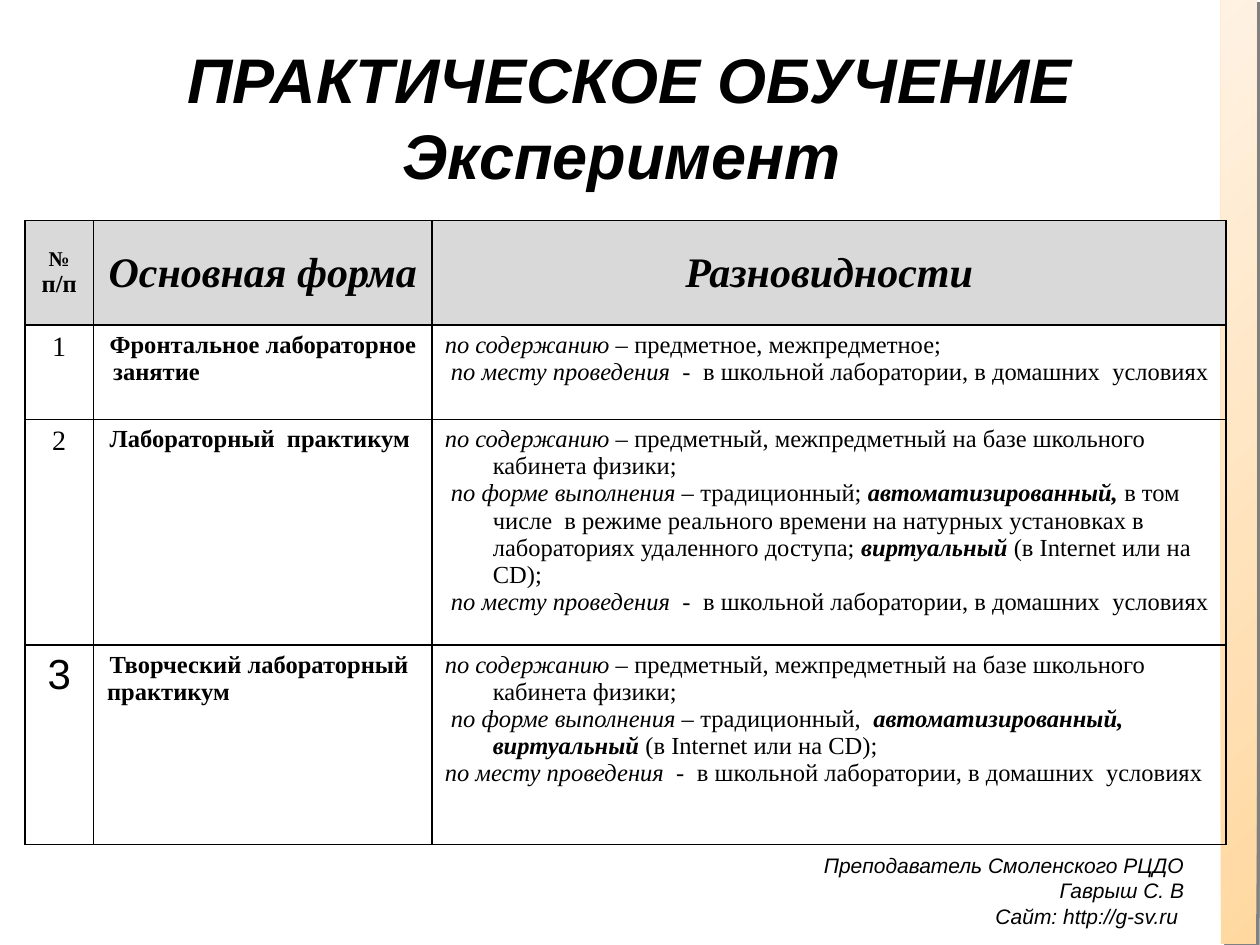
from dataclasses import dataclass

from lxml import etree
from pptx import Presentation
from pptx.dml.color import RGBColor
from pptx.enum.shapes import MSO_SHAPE
from pptx.enum.text import MSO_ANCHOR, PP_ALIGN
from pptx.oxml import parse_xml
from pptx.oxml.ns import nsdecls, qn
from pptx.util import Pt

RECT = MSO_SHAPE.RECTANGLE
TOP, MID = MSO_ANCHOR.TOP, MSO_ANCHOR.MIDDLE
LEFT, MIDDLE, RIGHT = PP_ALIGN.LEFT, PP_ALIGN.CENTER, PP_ALIGN.RIGHT


@dataclass(frozen=True)
class Theme:
    ink: str = "000000"
    head: str = "D9D9D9"
    dark: str = "FFD8A0"
    light: str = "FFF2E3"
    shade: str = "808080"
    sans: str = "Arial"
    serif: str = "Times New Roman"
    title: int = 36
    big: int = 24
    num: int = 16
    body: int = 14
    small: int = 12


T = Theme()
COLS = (38.9, 193.7, 453.6)
ROWS = (59.8, 54, 128.9, 113.8)
HANG = (27.4, -27.4)
DEEP = (41.8, -41.8)
NEAR = (0.7, 1.4)

BASE = ("по содержанию – ", "i")
FORM = ("по форме выполнения –", "i")
SITE = [("по месту проведения  -  ", "i"),
        ("в школьной лаборатории, в домашних  условиях", "")]
GAP = (" ", "")
ROOM = [BASE, ("предметный, межпредметный на базе школьного кабинета физики;", "")]
DATA = [
    ("1", T.num, T.serif, "Фронтальное лабораторное  занятие",
     [[BASE, ("предметное, межпредметное;", "")], [GAP, *SITE]]),
    ("2", T.num, T.serif, "Лабораторный  практикум",
     [ROOM,
      [GAP, FORM, (" традиционный; ", ""), ("автоматизированный, ", "bi"),
       ("в том числе  в режиме реального времени на натурных установках "
        "в лабораториях удаленного доступа;", ""),
       (" виртуальный ", "bi"), ("(в Internet или на CD);", "")],
      [GAP, *SITE]]),
    ("3", T.big, T.sans, "Творческий лабораторный практикум",
     [ROOM,
      [GAP, FORM, (" традиционный,  ", ""),
       ("автоматизированный, виртуальный", "bi"),
       (" (в Internet или на CD);", "")],
      SITE]),
]


def style(font, size, face, mark):
    look = {"size": Pt(size), "name": face,
            "bold": "b" in mark, "italic": "i" in mark}
    for key, val in look.items():
        setattr(font, key, val)
    font.color.rgb = RGBColor.from_string(T.ink)


def write(frame, paras, size, face, align=LEFT, indent=None):
    for i, runs in enumerate(paras):
        para = frame.add_paragraph() if i else frame.paragraphs[0]
        para.alignment = align
        if indent:
            props = para._p.get_or_add_pPr()
            for key, val in zip(("marL", "indent"), indent):
                props.set(key, str(int(Pt(val))))
        for text, mark, *own in runs:
            for j, part in enumerate(text.split("\n")):
                if j:
                    para.add_line_break()
                run = para.add_run()
                run.text = part
                style(run.font, own[0] if own else size, face, mark)


def add_text(slide, box, paras, size, align, anchor):
    frame = slide.shapes.add_textbox(*map(Pt, box)).text_frame
    frame.word_wrap = True
    frame.vertical_anchor = anchor
    write(frame, paras, size, T.sans, align)


def add_bar(slide, box):
    bar = slide.shapes.add_shape(RECT, *map(Pt, box))
    bar.line.fill.background()
    bar.fill.gradient()
    bar.fill.gradient_angle = 135
    for stop, tone in zip(bar.fill.gradient_stops, (T.dark, T.light)):
        stop.color.rgb = RGBColor.from_string(tone)
    bar.shadow.inherit = False
    cast = parse_xml(
        f'<a:outerShdw {nsdecls("a")} dist="{int(Pt(2.8))}" dir="2700000">'
        f'<a:srgbClr val="{T.shade}"/></a:outerShdw>')
    bar._element.spPr.find(qn("a:effectLst")).append(cast)


def edge(cell):
    props = cell._tc.get_or_add_tcPr()
    for i, side in enumerate(("lnL", "lnR", "lnT", "lnB")):
        line = etree.Element(qn(f"a:{side}"), w=str(int(Pt(1))))
        fill = etree.SubElement(line, qn("a:solidFill"))
        etree.SubElement(fill, qn("a:srgbClr"), val=T.ink)
        props.insert(i, line)


def fill_cell(cell, paras, size, face, align, indent, head=False):
    if head:
        cell.fill.solid()
        cell.fill.fore_color.rgb = RGBColor.from_string(T.head)
    else:
        cell.fill.background()
    cell.vertical_anchor = MID if head else TOP
    write(cell.text_frame, paras, size, face, align, indent)
    edge(cell)


def add_grid(slide):
    box = (14.4, 126, sum(COLS), sum(ROWS))
    grid = slide.shapes.add_table(len(ROWS), len(COLS), *map(Pt, box)).table
    grid.first_row = grid.horz_banding = False
    for col, wide in zip(grid.columns, COLS):
        col.width = Pt(wide)
    for row, high in zip(grid.rows, ROWS):
        row.height = Pt(high)
    heads = ([[("№", "b", T.small)], [("п/п", "b")]],
             [[("Основная форма", "bi", T.big)]],
             [[("Разновидности", "bi", T.big)]])
    for i, paras in enumerate(heads):
        fill_cell(grid.cell(0, i), paras, T.body, T.serif, MIDDLE, HANG, True)
    for i, (num, size, face, name, kinds) in enumerate(DATA, 1):
        fill_cell(grid.cell(i, 0), [[(num, "")]], size, face, MIDDLE, DEEP)
        fill_cell(grid.cell(i, 1), [[(name, "b")]], T.body, T.serif, LEFT, NEAR)
        fill_cell(grid.cell(i, 2), kinds, T.body, T.serif, LEFT, HANG)


def main():
    deck = Presentation()
    deck.slide_width, deck.slide_height = Pt(720), Pt(540)
    slide = deck.slides.add_slide(deck.slide_layouts[6])
    add_text(slide, (455.8, 483.8, 228, 43.2),
             [[("Преподаватель Смоленского РЦДО Гаврыш С. В", "i")],
              [("Сайт: http://g-sv.ru ", "i")]], T.small, RIGHT, TOP)
    add_bar(slide, (697.7, -0.7, 20.2, 540))
    add_text(slide, (36, 21.6, 648, 90),
             [[("ПРАКТИЧЕСКОЕ ОБУЧЕНИЕ\nЭксперимент ", "bi")]],
             T.title, MIDDLE, MID)
    add_grid(slide)
    deck.save("out.pptx")


if __name__ == "__main__":
    main()
